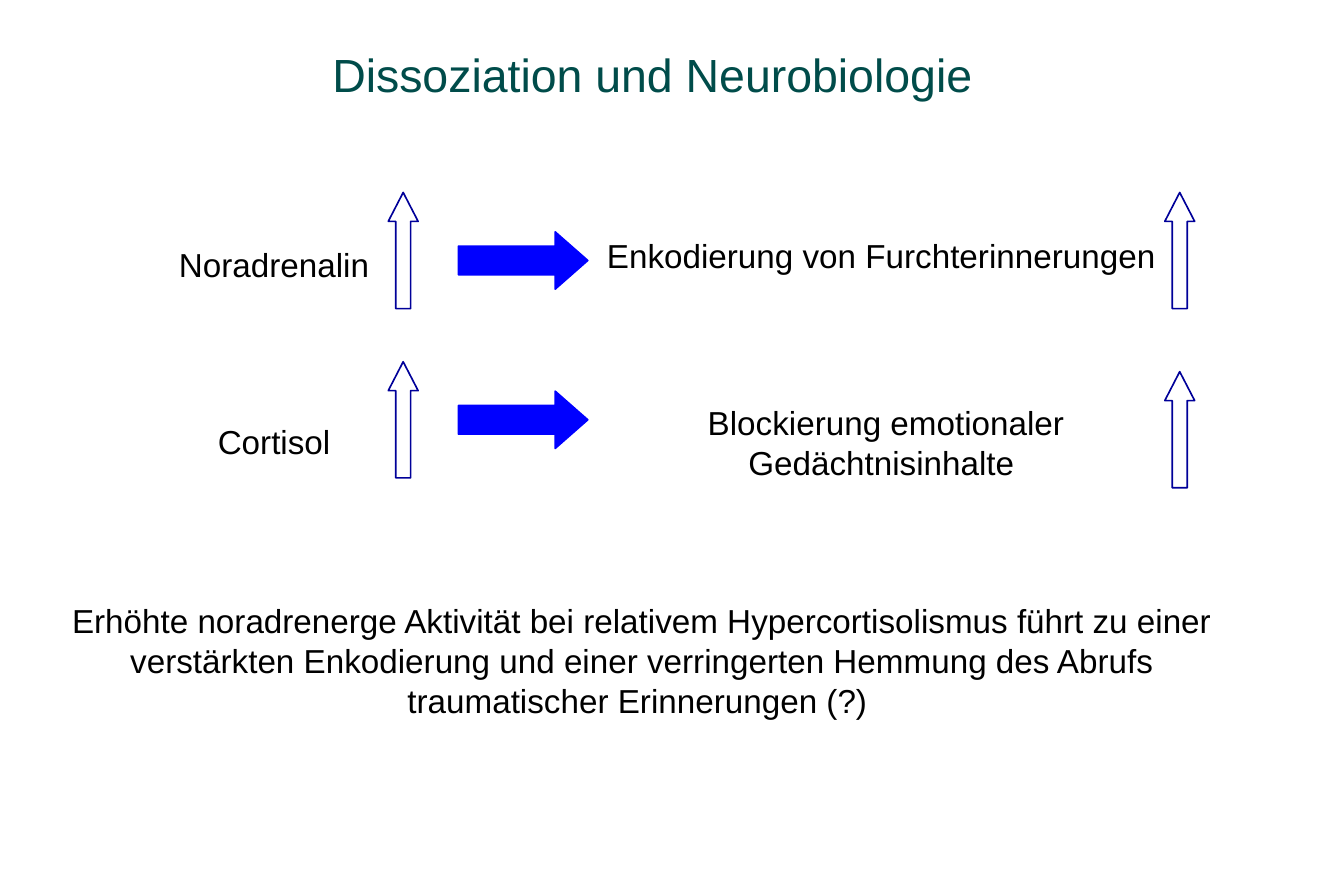
import pptx
import pptx.dml.color
import pptx.enum.shapes
import pptx.enum.text
import pptx.util

Pt = pptx.util.Pt


def colour(value):
    return pptx.dml.color.RGBColor.from_string(value)


class SlideBuilder:
    """Holds the text style and the current slide, and adds elements to it."""

    font_name = "Arial"

    def __init__(self, slide):
        self.slide = slide

    def fill_text(self, shape, text, size, text_colour):
        frame = shape.text_frame
        frame.word_wrap = True
        frame.vertical_anchor = pptx.enum.text.MSO_ANCHOR.TOP
        frame.text = text
        paragraph = frame.paragraphs[0]
        paragraph.alignment = pptx.enum.text.PP_ALIGN.CENTER
        font = paragraph.runs[0].font
        font.name = self.font_name
        font.size = Pt(size)
        font.color.rgb = colour(text_colour)

    def title(self, text, left, top, width, height):
        shape = self.slide.shapes.title
        shape.left, shape.top = Pt(left), Pt(top)
        shape.width, shape.height = Pt(width), Pt(height)
        self.fill_text(shape, text, 28, "004C4A")

    def label(self, text, left, top, width, height):
        shape = self.slide.shapes.add_textbox(Pt(left), Pt(top), Pt(width), Pt(height))
        self.fill_text(shape, text, 20, "000000")

    def arrow(self, left, top, width, height, head, fill, line, rotation=0):
        shape = self.slide.shapes.add_shape(
            pptx.enum.shapes.MSO_SHAPE.UP_ARROW, Pt(left), Pt(top), Pt(width), Pt(height)
        )
        shape.adjustments[0] = 0.5
        shape.adjustments[1] = head
        shape.rotation = rotation
        shape.shadow.inherit = False
        shape.fill.solid()
        shape.fill.fore_color.rgb = colour(fill)
        shape.line.color.rgb = colour(line)
        shape.line.width = Pt(1)

    def increase(self, left, top):
        self.arrow(left, top, 18, 70, 0.97, "FFFFFF", "000099")

    def effect(self, left, top):
        self.arrow(left, top, 34.5, 78, 0.57, "0000FF", "0000FF", rotation=90)


def main():
    presentation = pptx.Presentation()
    presentation.slide_width = Pt(810)
    presentation.slide_height = Pt(540)
    builder = SlideBuilder(presentation.slides.add_slide(presentation.slide_layouts[5]))

    builder.title("Dissoziation und Neurobiologie", 48, 24, 690, 90)

    rows = [
        ("Noradrenalin ", 144, 116, 118, "Enkodierung von Furchterinnerungen ", 138, 31, 116),
        ("Cortisol ", 250.5, 218, 214, "Blockierung emotionaler Gedächtnisinhalte ", 239, 55, 224),
    ]
    for hormone, hormone_top, cause_top, effect_top, result, result_top, result_height, rise_top in rows:
        builder.label(hormone, -18, hormone_top, 372, 31)
        builder.increase(234, cause_top)
        builder.effect(298, effect_top)
        builder.label(result, 348, result_top, 372, result_height)
        builder.increase(702, rise_top)

    builder.label(
        "Erhöhte noradrenerge Aktivität bei relativem Hypercortisolismus führt zu einer "
        "verstärkten Enkodierung und einer verringerten Hemmung des Abrufs "
        "traumatischer Erinnerungen (?) ",
        18, 358.5, 738, 79,
    )
    presentation.save("out.pptx")


if __name__ == "__main__":
    main()
